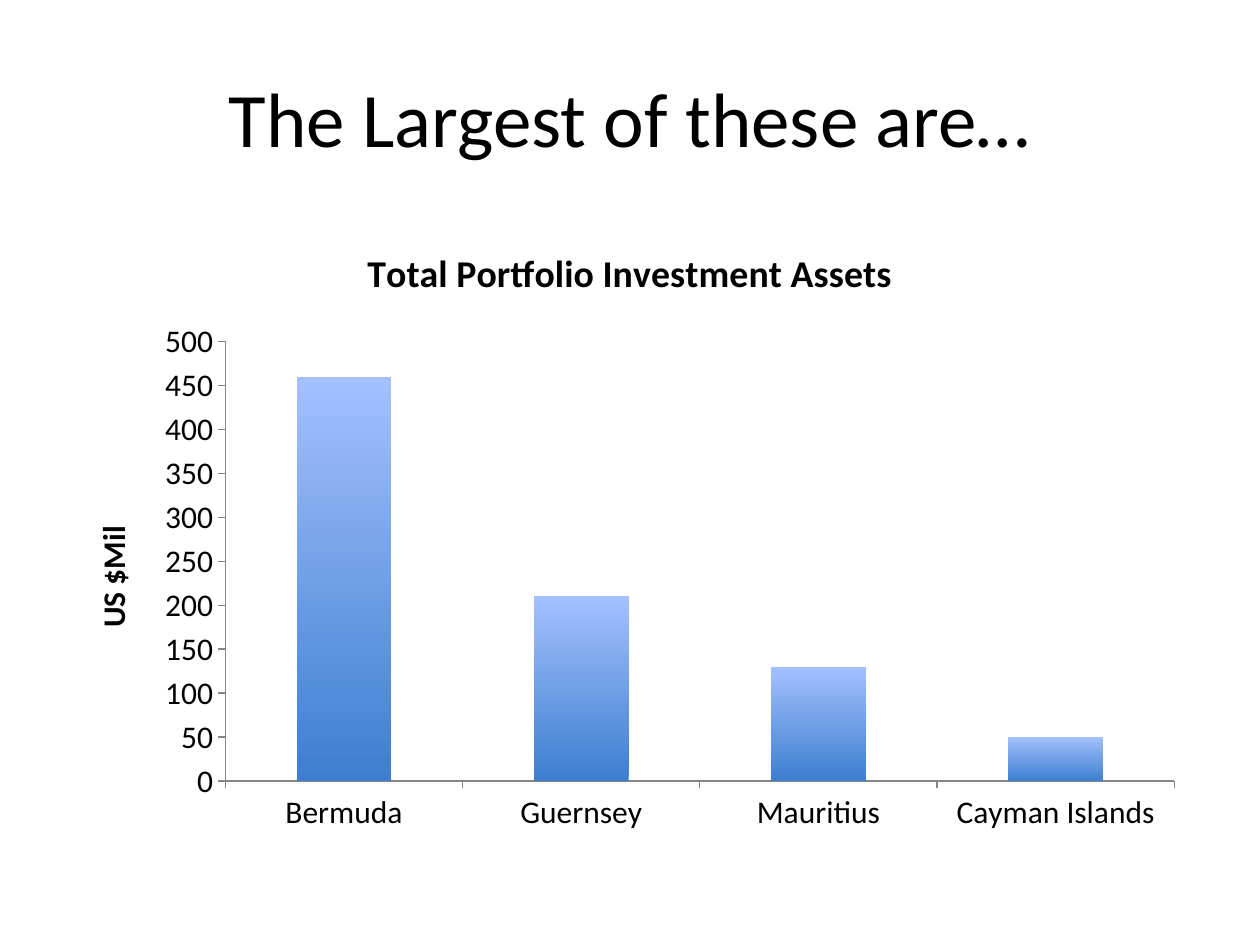
from lxml import etree
from pptx import Presentation
from pptx.chart.data import CategoryChartData
from pptx.dml.color import RGBColor
from pptx.enum.chart import XL_CHART_TYPE, XL_TICK_MARK
from pptx.enum.text import MSO_ANCHOR, PP_ALIGN
from pptx.util import Inches, Pt

COLUMNS = XL_CHART_TYPE.COLUMN_CLUSTERED
TICK_OUT, TICK_NONE = XL_TICK_MARK.OUTSIDE, XL_TICK_MARK.NONE
MIDDLE, CENTER = MSO_ANCHOR.MIDDLE, PP_ALIGN.CENTER

THEME = {
    "font": "Calibri",
    "text": RGBColor.from_string("000000"),
    "axis": RGBColor.from_string("868686"),
    "bar_bottom": RGBColor.from_string("3D7FCE"),
    "bar_top": RGBColor.from_string("A3C0FF"),
    "title": Pt(44),
    "chart_title": Pt(21.6),
    "chart_text": Pt(18),
}
ASSETS = {"Bermuda": 460, "Guernsey": 210, "Mauritius": 130, "Cayman Islands": 50}
CHART_W, CHART_H = Inches(9), Inches(4.95)
PLOT_AREA = {
    "x": Inches(1.29) / CHART_W,
    "y": Inches(0.96) / CHART_H,
    "w": Inches(7.53) / CHART_W,
    "h": Inches(3.49) / CHART_H,
}


def style_font(font, size, bold=False):
    values = {"name": THEME["font"], "size": THEME[size], "bold": bold}
    for name, value in values.items():
        setattr(font, name, value)
    font.color.rgb = THEME["text"]


def set_text(tf, text, size, bold=False):
    tf.text = text
    style_font(tf.paragraphs[0].runs[0].font, size, bold)


prs = Presentation()
prs.slide_width, prs.slide_height = Inches(10), Inches(7.5)
s = prs.slides.add_slide(prs.slide_layouts[6])

# Slide title
tf = s.shapes.add_textbox(Inches(0.5), Inches(0.3), Inches(9), Inches(1.25)).text_frame
tf.word_wrap = True
tf.vertical_anchor = MIDDLE
set_text(tf, "The Largest of these are…", "title")
tf.paragraphs[0].alignment = CENTER

# Column chart
data = CategoryChartData()
data.categories = list(ASSETS)
data.add_series("Series 1", list(ASSETS.values()))
chart = s.shapes.add_chart(COLUMNS, Inches(0.5), Inches(1.75), CHART_W, CHART_H, data).chart
chart.has_legend = False
style_font(chart.font, "chart_text")
set_text(chart.chart_title.text_frame, "Total Portfolio Investment Assets", "chart_title", bold=True)
set_text(chart.value_axis.axis_title.text_frame, "US $Mil", "chart_text", bold=True)

for axis in (chart.category_axis, chart.value_axis):
    axis.has_major_gridlines = False
    axis.major_tick_mark = TICK_OUT
    axis.minor_tick_mark = TICK_NONE
    axis.format.line.color.rgb = THEME["axis"]
    axis.format.line.width = Pt(0.75)

scale = {"minimum_scale": 0, "maximum_scale": 500, "major_unit": 50}
for name, value in scale.items():
    setattr(chart.value_axis, name, value)

# Bars run from dark at the foot to light at the top
plot = chart.plots[0]
plot.gap_width = 150
plot.vary_by_categories = False
fill = plot.series[0].format.fill
fill.gradient()
fill.gradient_angle = 90
for stop, color in zip(fill.gradient_stops, ("bar_bottom", "bar_top")):
    stop.color.rgb = THEME[color]

# Fixed inner plot area, as fractions of the chart
plot_area = chart.element.chart.plotArea
ns = "{" + plot_area.nsmap["c"] + "}"
for old in plot_area.findall(ns + "layout"):
    plot_area.remove(old)
layout = etree.Element(ns + "layout")
plot_area.insert(0, layout)
manual = etree.SubElement(layout, ns + "manualLayout")
settings = {"layoutTarget": "inner", "xMode": "edge", "yMode": "edge", **PLOT_AREA}
for tag, value in settings.items():
    etree.SubElement(manual, ns + tag, val=str(value))

prs.save("out.pptx")
